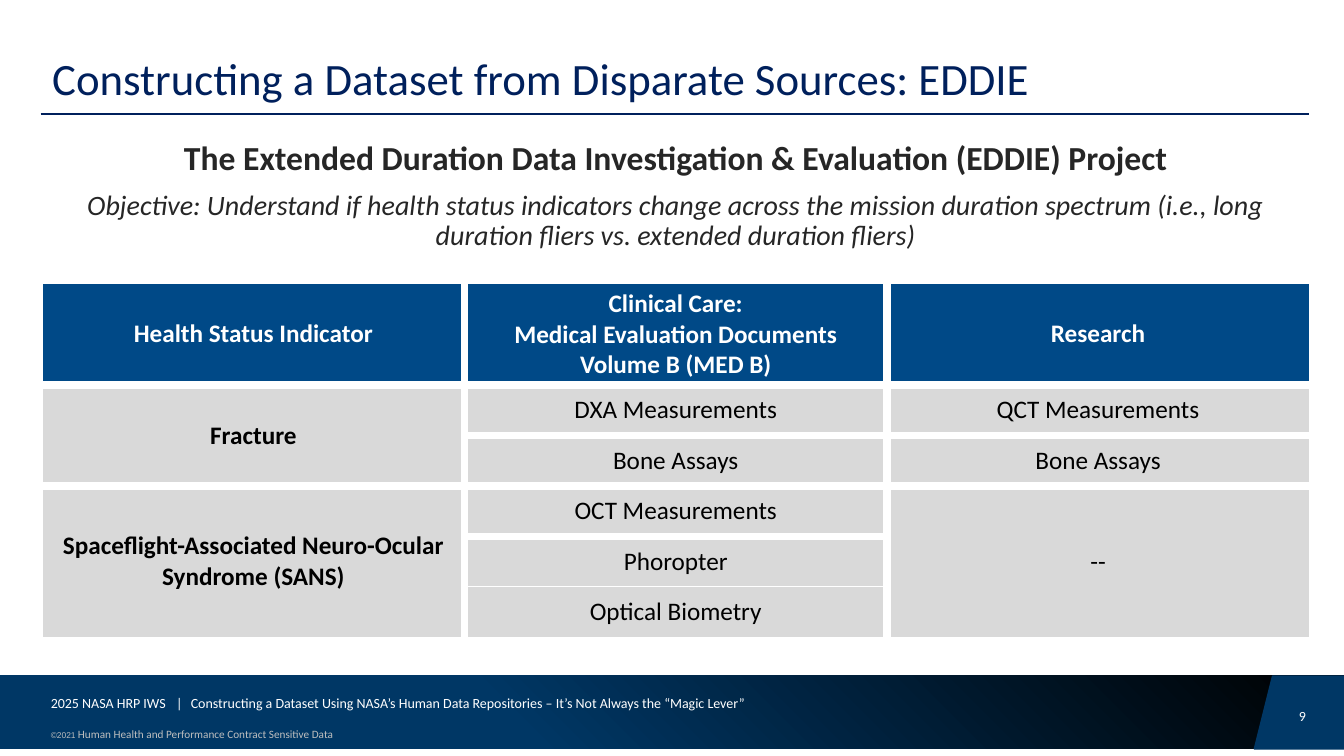
from lxml import etree
from pptx import Presentation
from pptx.dml.color import RGBColor
from pptx.enum import shapes, text
from pptx.oxml.ns import qn
from pptx.util import Pt

WHITE = RGBColor(255, 255, 255)
BLACK = RGBColor(0, 0, 0)
NAVY = RGBColor(0x00, 0x20, 0x5C)
DEEP = RGBColor(0x00, 0x37, 0x65)
BLUE = RGBColor(0x00, 0x49, 0x87)
GREY = RGBColor(0xD9, 0xD9, 0xD9)
PALE = RGBColor(0xBF, 0xBF, 0xBF)
INK = RGBColor(0x26, 0x26, 0x26)

LEFT, CENTER, RIGHT = (text.PP_ALIGN.LEFT, text.PP_ALIGN.CENTER,
                       text.PP_ALIGN.RIGHT)
TOP, MIDDLE, BOTTOM = (text.MSO_ANCHOR.TOP, text.MSO_ANCHOR.MIDDLE,
                       text.MSO_ANCHOR.BOTTOM)

HEADS = ["Health Status Indicator",
         "Clinical Care:\nMedical Evaluation Documents Volume B (MED B)",
         "Research"]
ROWS = [["Fracture", "DXA Measurements", "QCT Measurements"],
        ["", "Bone Assays", "Bone Assays"],
        ["Spaceflight-Associated Neuro-Ocular Syndrome (SANS)",
         "OCT Measurements", "--"],
        ["", "Phoropter", ""],
        ["", "Optical Biometry", ""]]
MERGES = [(1, 2, 0), (3, 5, 0), (3, 5, 2)]  # first row, last row, column
THIN = {(5, 1)}  # inner cells whose top edge is thin


def node(parent, tag, **attrs):
    return etree.SubElement(parent, qn(tag), attrs)


def write(para, words, size=18, color=WHITE, bold=False, italic=False,
          align=LEFT, lead=None, before=0, tabs=()):
    """Add one formatted run; tabs are stops in points."""
    if tabs:
        stops = node(para._p.get_or_add_pPr(), "a:tabLst")
        for stop in tabs:
            node(stops, "a:tab", pos=str(int(Pt(stop))), algn="l")
    para.alignment = align
    if lead:
        para.line_spacing = lead
    if before:
        para.space_before = Pt(before)
    run = para.add_run()
    run.text = words
    font = run.font
    font.name, font.size, font.color.rgb = "Calibri", Pt(size), color
    font.bold, font.italic = bold, italic
    return font


def frame(slide, x, y, w, h, anchor=TOP):
    body = slide.shapes.add_textbox(Pt(x), Pt(y), Pt(w), Pt(h)).text_frame
    body.word_wrap = True
    body.vertical_anchor = anchor
    return body


def title(slide, x, y, w, h):
    body = frame(slide, x + 1.2, y, w, h - 6.5, BOTTOM)
    body.margin_top = body.margin_bottom = 0
    write(body.paragraphs[0],
          "Constructing a Dataset from Disparate Sources: EDDIE",
          size=32, color=NAVY, lead=0.9)
    rule = slide.shapes.add_connector(shapes.MSO_CONNECTOR.STRAIGHT,
                                      Pt(x), Pt(y + h), Pt(x + w), Pt(y + h))
    rule.line.color.rgb, rule.line.width = NAVY, Pt(1.5)
    node(rule._element.spPr, "a:effectLst")


def intro(slide, x, y, w, h):
    body = frame(slide, x, y, w, h)
    look = dict(color=INK, align=CENTER, lead=0.9)
    write(body.paragraphs[0],
          "The Extended Duration Data Investigation & Evaluation (EDDIE) "
          "Project", size=24, bold=True, **look)
    write(body.add_paragraph(),
          "Objective: Understand if health status indicators change across "
          "the mission duration spectrum (i.e., long duration fliers vs. "
          "extended duration fliers)",
          size=20, italic=True, before=10, **look)


def edge(cell, **widths):
    """Draw white cell borders, given in points by side."""
    props = cell._tc.get_or_add_tcPr()
    for spot, (side, width) in enumerate(widths.items()):
        line = etree.Element(qn("a:ln" + side), w=str(int(Pt(width))))
        node(node(line, "a:solidFill"), "a:srgbClr", val=str(WHITE))
        props.insert(spot, line)


def grid(slide, x, y, w, h, head=72.8):
    data = [HEADS] + ROWS
    last, wide = len(data), len(HEADS)
    table = slide.shapes.add_table(last, wide, Pt(x), Pt(y),
                                   Pt(w), Pt(h)).table
    for col in table.columns:
        col.width = Pt(w / wide)
    for r, row in enumerate(table.rows):
        row.height = Pt((h - head) / len(ROWS) if r else head)
    for first, end, c in MERGES:
        table.cell(first, c).merge(table.cell(end, c))

    def rule(r, c):
        return 1 if r in (0, last) or (r, c) in THIN else 6

    for r, row in enumerate(data):
        for c, words in enumerate(row):
            cell = table.cell(r, c)
            cell.fill.solid()
            cell.fill.fore_color.rgb = GREY if r else BLUE
            if cell.is_spanned:
                continue
            cell.vertical_anchor = MIDDLE
            span = cell.span_height if cell.is_merge_origin else 1
            edge(cell, L=6 if c else 1, R=6 if c < wide - 1 else 1,
                 T=rule(r, c), B=rule(r + span, c))
            body = cell.text_frame
            for i, part in enumerate(words.split("\n")):
                para = body.add_paragraph() if i else body.paragraphs[0]
                write(para, part, color=BLACK if r else WHITE,
                      bold=r == 0 or c == 0, align=CENTER)


def footer(slide, x, y, w, h):
    band = slide.shapes.add_shape(shapes.MSO_SHAPE.RECTANGLE,
                                  Pt(x), Pt(y), Pt(w), Pt(h))
    band.shadow.inherit = False
    band.line.fill.background()
    band.fill.gradient()
    for stop, color, place in zip(band.fill.gradient_stops,
                                  (BLACK, DEEP), (0, 0.62)):
        stop.color.rgb, stop.position = color, place
    fill = band._element.spPr.find(qn("a:gradFill"))
    fill.remove(fill.find(qn("a:lin")))
    node(node(fill, "a:path", path="circle"), "a:fillToRect",
         l="100000", b="100000")

    right, base = x + w, y + h
    pen = slide.shapes.build_freeform(Pt(right - 64), Pt(base))
    pen.add_line_segments([(Pt(right - 51), Pt(y + 0.5)),
                           (Pt(right), Pt(y + 0.5)), (Pt(right), Pt(base))])
    flap = pen.convert_to_shape()
    flap.shadow.inherit = False
    flap.fill.solid()
    flap.fill.fore_color.rgb = flap.line.color.rgb = DEEP
    flap.line.width = Pt(1)

    page = frame(slide, right - 50, y + 21.5, 30, 15, MIDDLE)
    write(page.paragraphs[0], "9", size=10, align=RIGHT)
    talk = frame(slide, x + 29.2, y + 5, 708.5, 29, MIDDLE)
    write(talk.paragraphs[0],
          "2025 NASA HRP IWS\t|\tConstructing a Dataset Using NASA’s Human "
          "Data Repositories – It’s Not Always the “Magic Lever”",
          size=10, tabs=(89.5, 100))
    legal = frame(slide, x + 29.2, y + 32.5, 332.5, 17.5, BOTTOM)
    write(legal.paragraphs[0], "©2021 ", size=6, color=PALE).name = "Arial"
    write(legal.paragraphs[0],
          "Human Health and Performance Contract Sensitive Data",
          size=8, color=PALE)


def main():
    deck = Presentation()
    deck.slide_width, deck.slide_height = Pt(960), Pt(540)
    slide = deck.slides.add_slide(deck.slide_layouts[6])
    footer(slide, 0, 482.5, 960, 52.5)
    title(slide, 29, 8, 906.2, 73.5)
    intro(slide, 30.2, 97.2, 905, 88.5)
    grid(slide, 30.2, 202.3, 905, 252.8)
    deck.save("out.pptx")


if __name__ == "__main__":
    main()
